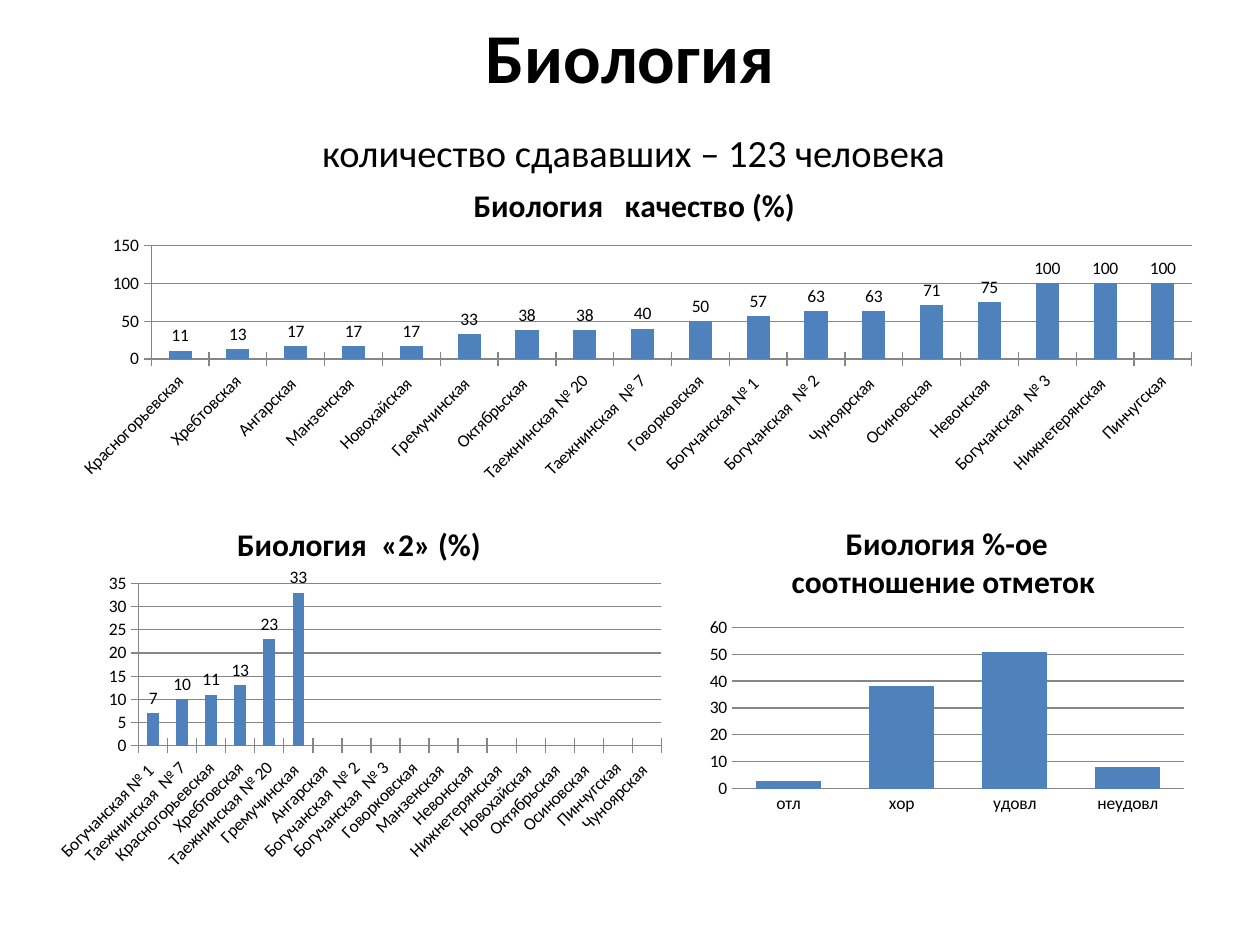
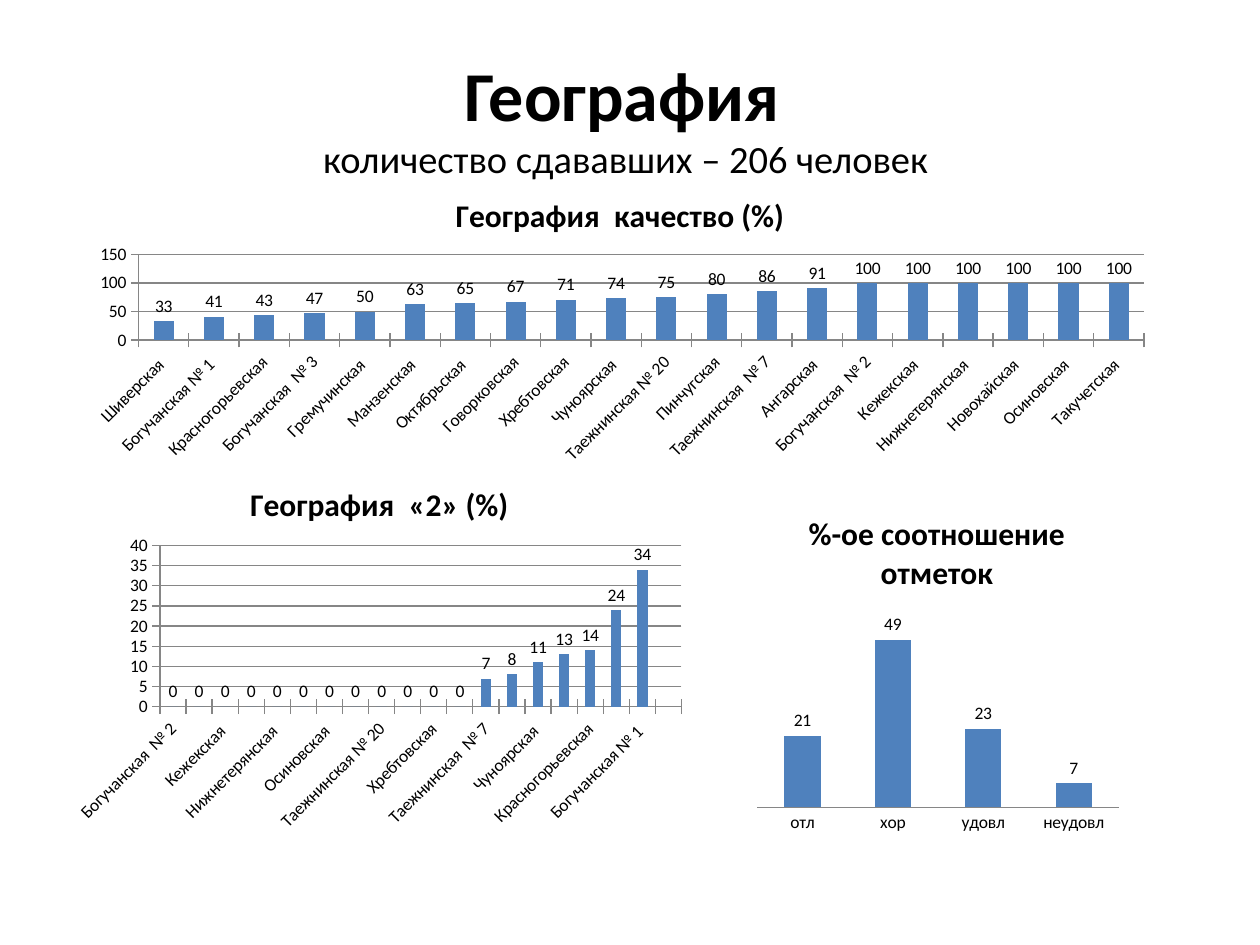
from lxml import etree
from pptx import Presentation
from pptx.chart.data import CategoryChartData as ChartData
from pptx.dml.color import RGBColor
from pptx.enum.chart import XL_CHART_TYPE as ChartType, XL_LABEL_POSITION as LabelPosition
from pptx.enum.chart import XL_TICK_MARK as TickMark
from pptx.enum.text import MSO_ANCHOR as Anchor, PP_ALIGN as Align
from pptx.oxml.ns import qn
from pptx.util import Inches, Pt

# Shared style
BLACK = RGBColor(0x00, 0x00, 0x00)
BAR_BLUE = RGBColor(0x4F, 0x81, 0xBD)
AXIS_GRAY = RGBColor(0x86, 0x86, 0x86)
FONT = "Calibri"
MARKS = ["отл", "хор", "удовл", "неудовл"]


def style_font(font, size, bold=False):
    font.name = FONT
    font.size = Pt(size)
    font.bold = bold
    font.color.rgb = BLACK


def add_run(paragraph, text, **style):
    run = paragraph.add_run()
    run.text = text
    style_font(run.font, **style)


def place_plot(chart, box, plot_box):
    """Fix the inner plot area; both boxes are in slide inches."""
    left, top, width, height = box
    plot_left, plot_top, plot_width, plot_height = plot_box
    plot_area = chart.element.find(".//" + qn("c:plotArea"))
    for old_layout in plot_area.findall(qn("c:layout")):
        plot_area.remove(old_layout)
    layout = etree.Element(qn("c:layout"))
    manual = etree.SubElement(layout, qn("c:manualLayout"))
    settings = {
        "layoutTarget": "inner", "xMode": "edge", "yMode": "edge",
        "x": (plot_left - left) / width, "y": (plot_top - top) / height,
        "w": plot_width / width, "h": plot_height / height,
    }
    for name, value in settings.items():
        etree.SubElement(manual, qn("c:" + name)).set("val", str(value))
    plot_area.insert(0, layout)


class Deck:
    def __init__(self):
        self.presentation = Presentation()
        self.presentation.slide_width = Inches(10)
        self.presentation.slide_height = Inches(7.5)
        self.slide = None

    def add_slide(self):
        self.slide = self.presentation.slides.add_slide(self.presentation.slide_layouts[6])

    def add_title(self, subject, subtitle, top, height, lead=""):
        """Subject over a lighter subtitle; lead opens the second line in the large size."""
        shape = self.slide.shapes.add_textbox(Inches(0.5), Inches(top), Inches(9), Inches(height))
        frame = shape.text_frame
        frame.word_wrap = True
        frame.vertical_anchor = Anchor.MIDDLE
        paragraph = frame.paragraphs[0]
        paragraph.alignment = Align.CENTER
        add_run(paragraph, subject, size=40, bold=True)
        paragraph.add_line_break()
        if lead:
            add_run(paragraph, lead, size=40, bold=True)
        add_run(paragraph, subtitle, size=22)

    def add_columns(self, title, categories, values, box, plot_box,
                    labels=True, gap=150, overlap=0):
        data = ChartData()
        data.categories = categories
        data.add_series("Series 1", values)
        chart = self.slide.shapes.add_chart(
            ChartType.COLUMN_CLUSTERED, *map(Inches, box), data).chart
        style_font(chart.font, 10)
        chart.has_legend = False
        chart.has_title = True
        add_run(chart.chart_title.text_frame.paragraphs[0], title, size=18, bold=True)
        chart.chart_title.include_in_layout = False

        plot = chart.plots[0]
        plot.vary_by_categories = False
        plot.gap_width = gap
        plot.overlap = overlap
        fill = plot.series[0].format.fill
        fill.solid()
        fill.fore_color.rgb = BAR_BLUE
        if labels:
            plot.has_data_labels = True
            plot.data_labels.show_value = True
            plot.data_labels.position = LabelPosition.OUTSIDE_END
            style_font(plot.data_labels.font, 10)

        chart.value_axis.has_major_gridlines = True
        for axis in (chart.category_axis, chart.value_axis):
            axis.major_tick_mark = TickMark.CROSS
            style_font(axis.tick_labels.font, 10)
            self.style_line(axis.format.line)
        self.style_line(chart.value_axis.major_gridlines.format.line)
        place_plot(chart, box, plot_box)
        return chart

    def add_school_chart(self, title, schools, values, box, plot_box):
        chart = self.add_columns(title, schools, values, box, plot_box)
        body = chart.element.find(".//" + qn("c:catAx")).find(".//" + qn("a:bodyPr"))
        body.set("rot", "-2700000")
        body.set("vert", "horz")
        return chart

    def add_marks_chart(self, title, values, box, plot_box, **options):
        chart = self.add_columns(title, MARKS, values, box, plot_box, overlap=-25, **options)
        chart.category_axis.major_tick_mark = TickMark.NONE
        chart.value_axis.major_tick_mark = TickMark.NONE
        chart.value_axis.format.line.fill.background()
        chart.value_axis.minimum_scale = 0
        chart.value_axis.maximum_scale = 60
        return chart

    @staticmethod
    def style_line(line):
        line.color.rgb = AXIS_GRAY
        line.width = Pt(0.75)


def build_biology(deck):
    deck.add_slide()
    deck.add_title("Биология", "количество сдававших – 123 человека ", 0, 1.55, lead=" ")
    deck.add_school_chart(
        "Биология   качество (%)",
        [" Красногорьевская", "Хребтовская", " Ангарская ", "Манзенская ", "Новохайская ",
         "Гремучинская ", "Октябрьская ", " Таежнинская № 20", "Таежнинская  № 7",
         "Говорковская", "Богучанская № 1 ", "Богучанская  № 2", "Чуноярская ", "Осиновская ",
         "Невонская ", "Богучанская  № 3", "Нижнетерянская ", "Пинчугская"],
        [11, 13, 17, 17, 17, 33, 38, 38, 40, 50, 57, 63, 63, 71, 75, 100, 100, 100],
        (0.43, 1.31, 9.21, 2.6), (1.2, 1.95, 8.26, 0.9))
    deck.add_school_chart(
        "Биология  «2» (%)",
        ["Богучанская № 1 ", "Таежнинская  № 7", " Красногорьевская", "Хребтовская",
         " Таежнинская № 20", "Гремучинская ", " Ангарская ", "Богучанская  № 2",
         "Богучанская  № 3", "Говорковская", "Манзенская ", "Невонская ", "Нижнетерянская ",
         "Новохайская ", "Октябрьская ", "Осиновская ", "Пинчугская", "Чуноярская "],
        [7, 10, 11, 13, 23, 33] + [None] * 12,
        (0.35, 3.99, 5, 3), (1.1, 4.63, 4.15, 1.29))
    deck.add_marks_chart(
        "Биология %-ое соотношение отметок ", [3, 38, 51, 8],
        (5.55, 3.99, 3.93, 2.51), (5.81, 4.98, 3.59, 1.28), labels=False, gap=75)


def build_geography(deck):
    deck.add_slide()
    deck.add_title("География ", "количество сдававших – 206 человек ", 0.3, 1.25)
    deck.add_school_chart(
        "География  качество (%)",
        ["Шиверская ", "Богучанская № 1 ", " Красногорьевская", "Богучанская  № 3",
         "Гремучинская ", "Манзенская ", "Октябрьская ", "Говорковская", "Хребтовская",
         "Чуноярская ", " Таежнинская № 20", "Пинчугская", "Таежнинская  № 7", " Ангарская ",
         "Богучанская  № 2", "Кежекская ", "Нижнетерянская ", "Новохайская ", "Осиновская ",
         "Такучетская "],
        [33, 41, 43, 47, 50, 63, 65, 67, 71, 74, 75, 80, 86, 91] + [100] * 6,
        (0.59, 1.39, 8.66, 2.36), (1.1, 2.02, 7.98, 0.68))
    # The last column has neither a school nor a value
    deck.add_school_chart(
        "География  «2» (%)",
        ["Богучанская  № 2", "Говорковская", "Кежекская ", "Манзенская ", "Нижнетерянская ",
         "Новохайская ", "Осиновская ", "Пинчугская", " Таежнинская № 20", "Такучетская ",
         "Хребтовская", "Шиверская ", "Таежнинская  № 7", "Гремучинская ", "Чуноярская ",
         "Октябрьская ", " Красногорьевская", "Богучанская  № 3", "Богучанская № 1 ", ""],
        [0] * 12 + [7, 8, 11, 13, 14, 24, 34, None],
        (0.51, 3.67, 5, 3), (1.27, 4.33, 4.14, 1.28))
    chart = deck.add_marks_chart(
        "%-ое соотношение отметок", [21, 49, 23, 7],
        (5.94, 3.91, 2.99, 2.76), (6.01, 4.78, 2.87, 1.63))
    chart.value_axis.has_major_gridlines = False
    chart.value_axis.visible = False


def main():
    deck = Deck()
    build_biology(deck)
    build_geography(deck)
    deck.presentation.save("out.pptx")


if __name__ == "__main__":
    main()
